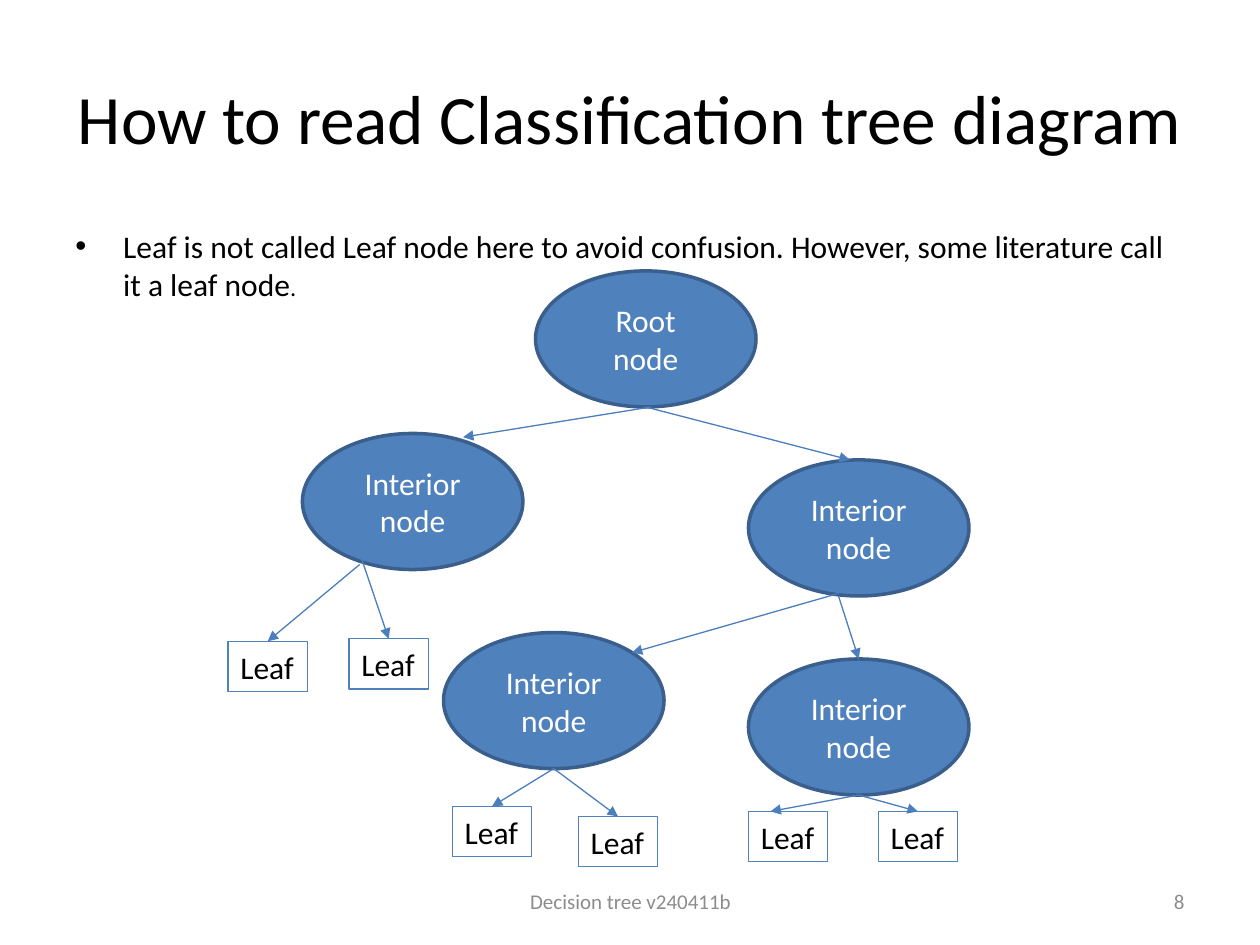
from dataclasses import dataclass

from lxml import etree
from pptx import Presentation
from pptx import util as u
from pptx.dml.color import RGBColor
from pptx.enum import shapes, text
from pptx.oxml import ns

COLUMNS, ROWS = 100, 75
WIDTH, HEIGHT = u.Inches(10), u.Inches(7.5)
FONT = "Calibri"

BLACK = RGBColor(0x00, 0x00, 0x00)
WHITE = RGBColor(0xFF, 0xFF, 0xFF)
GREY = RGBColor(0x8C, 0x8C, 0x8C)
BLUE = RGBColor(0x4F, 0x81, 0xBD)
DARK_BLUE = RGBColor(0x3A, 0x5F, 0x8C)
ARROW_BLUE = RGBColor(0x4B, 0x7E, 0xBC)


@dataclass(frozen=True)
class Node:
    """A tree node: its left column, top row and label."""
    left: float
    top: float
    label: str = "Interior node"
    width: float = 17.5
    height: float = 10.8

    @property
    def center(self) -> float:
        return self.left + self.width / 2


@dataclass(frozen=True)
class Leaf(Node):
    label: str = "Leaf"
    width: float = 6.3
    height: float = 4.0


@dataclass(frozen=True)
class Edge:
    """An arrow from parent's bottom centre to child's top centre, each end shifted."""
    parent: Node
    child: Node
    start_shift: tuple[float, float] = (0, 0)
    end_shift: tuple[float, float] = (0, 0)


ROOT = Node(42.5, 21.5, "Root node")
LEFT = Node(24, 34.4)
RIGHT = Node(59.4, 36.5)
LOWER_LEFT = Node(35.2, 50.2)
LOWER_RIGHT = Node(59.4, 52.3)
INNER_NODES = [ROOT, LEFT, RIGHT, LOWER_LEFT, LOWER_RIGHT]

LEAVES = [Leaf(18.1, 50.9), Leaf(27.7, 50.7), Leaf(35.9, 64),
          Leaf(45.9, 64.8), Leaf(59.4, 64.4), Leaf(69.7, 64.4)]

EDGES = [
    Edge(ROOT, LEFT, (0.4, 0), (4, 0.3)),
    Edge(ROOT, RIGHT, end_shift=(-0.7, 0)),
    Edge(LEFT, LEAVES[0], (-4.2, -0.4)),
    Edge(LEFT, LEAVES[1], (-4.1, -1)),
    Edge(RIGHT, LOWER_LEFT, (-1.6, -0.2), (6.2, 1.6)),
    Edge(RIGHT, LOWER_RIGHT, (-1.6, 0)),
    Edge(LOWER_LEFT, LEAVES[2]),
    Edge(LOWER_LEFT, LEAVES[3]),
    Edge(LOWER_RIGHT, LEAVES[4], end_shift=(-1.4, 0)),
    Edge(LOWER_RIGHT, LEAVES[5]),
]


def x(columns: float) -> int:
    return round(WIDTH * columns / COLUMNS)


def y(rows: float) -> int:
    return round(HEIGHT * rows / ROWS)


def add_span(para, words: str, *, size: float, color: RGBColor) -> None:
    span = para.add_run()
    span.text = words
    span.font.name = FONT
    span.font.size = u.Pt(size)
    span.font.color.rgb = color


def write(box, words: str, *, size: float = 18, color: RGBColor = BLACK,
          align=text.PP_ALIGN.CENTER, anchor=text.MSO_ANCHOR.MIDDLE,
          wrap: bool = True):
    """Fill the box with one formatted paragraph and return that paragraph."""
    frame = box.text_frame
    frame.word_wrap = wrap
    frame.vertical_anchor = anchor
    para = frame.paragraphs[0]
    para.alignment = align
    add_span(para, words, size=size, color=color)
    return para


def add_text(page, left: float, top: float, width: float, height: float,
             words: str, **style):
    box = page.shapes.add_textbox(x(left), y(top), x(width), y(height))
    return write(box, words, **style)


def add_bullet(para) -> None:
    properties = para._p.get_or_add_pPr()
    properties.set("marL", str(u.Inches(0.38)))
    properties.set("indent", str(u.Inches(-0.38)))
    font = etree.SubElement(properties, ns.qn("a:buFont"))
    font.set("typeface", "Arial")
    bullet = etree.SubElement(properties, ns.qn("a:buChar"))
    bullet.set("char", "•")


def add_node(page, node: Node) -> None:
    is_leaf = isinstance(node, Leaf)
    kind = shapes.MSO_SHAPE.RECTANGLE if is_leaf else shapes.MSO_SHAPE.OVAL
    shape = page.shapes.add_shape(kind, x(node.left), y(node.top),
                                  x(node.width), y(node.height))
    shape.shadow.inherit = False
    if is_leaf:
        shape.fill.background()
        shape.line.color.rgb = BLUE
        shape.line.width = u.Pt(0.75)
        write(shape, node.label, align=text.PP_ALIGN.LEFT,
              anchor=text.MSO_ANCHOR.TOP, wrap=False)
    else:
        shape.fill.solid()
        shape.fill.fore_color.rgb = BLUE
        shape.line.color.rgb = DARK_BLUE
        shape.line.width = u.Pt(2)
        write(shape, node.label, color=WHITE)


def add_edge(page, edge: Edge) -> None:
    parent, child = edge.parent, edge.child
    arrow = page.shapes.add_connector(
        shapes.MSO_CONNECTOR.STRAIGHT,
        x(parent.center + edge.start_shift[0]),
        y(parent.top + parent.height + edge.start_shift[1]),
        x(child.center + edge.end_shift[0]),
        y(child.top + edge.end_shift[1]))
    arrow.line.color.rgb = ARROW_BLUE
    arrow.line.width = u.Pt(0.75)
    head = etree.SubElement(arrow.line._get_or_add_ln(), ns.qn("a:tailEnd"))
    head.set("type", "triangle")
    etree.SubElement(arrow._element.spPr, ns.qn("a:effectLst"))


def main() -> None:
    deck = Presentation()
    deck.slide_width, deck.slide_height = WIDTH, HEIGHT
    page = deck.slides.add_slide(deck.slide_layouts[6])

    add_text(page, 5, 3, 90, 12.5, "How to read Classification tree diagram",
             size=39.6)
    note = add_text(page, 5, 17.5, 90, 49.5,
                    "Leaf is not called Leaf node here to avoid confusion. "
                    "However, some literature call it a leaf node",
                    align=text.PP_ALIGN.LEFT, anchor=text.MSO_ANCHOR.TOP)
    add_span(note, ".", size=14, color=BLACK)
    add_bullet(note)
    add_text(page, 34.2, 69.5, 31.7, 4, "Decision tree v240411b",
             size=12, color=GREY)
    add_text(page, 71.7, 69.5, 23.3, 4, "8", size=12, color=GREY,
             align=text.PP_ALIGN.RIGHT)

    for node in INNER_NODES + LEAVES:
        add_node(page, node)
    for edge in EDGES:
        add_edge(page, edge)
    deck.save("out.pptx")


if __name__ == "__main__":
    main()
